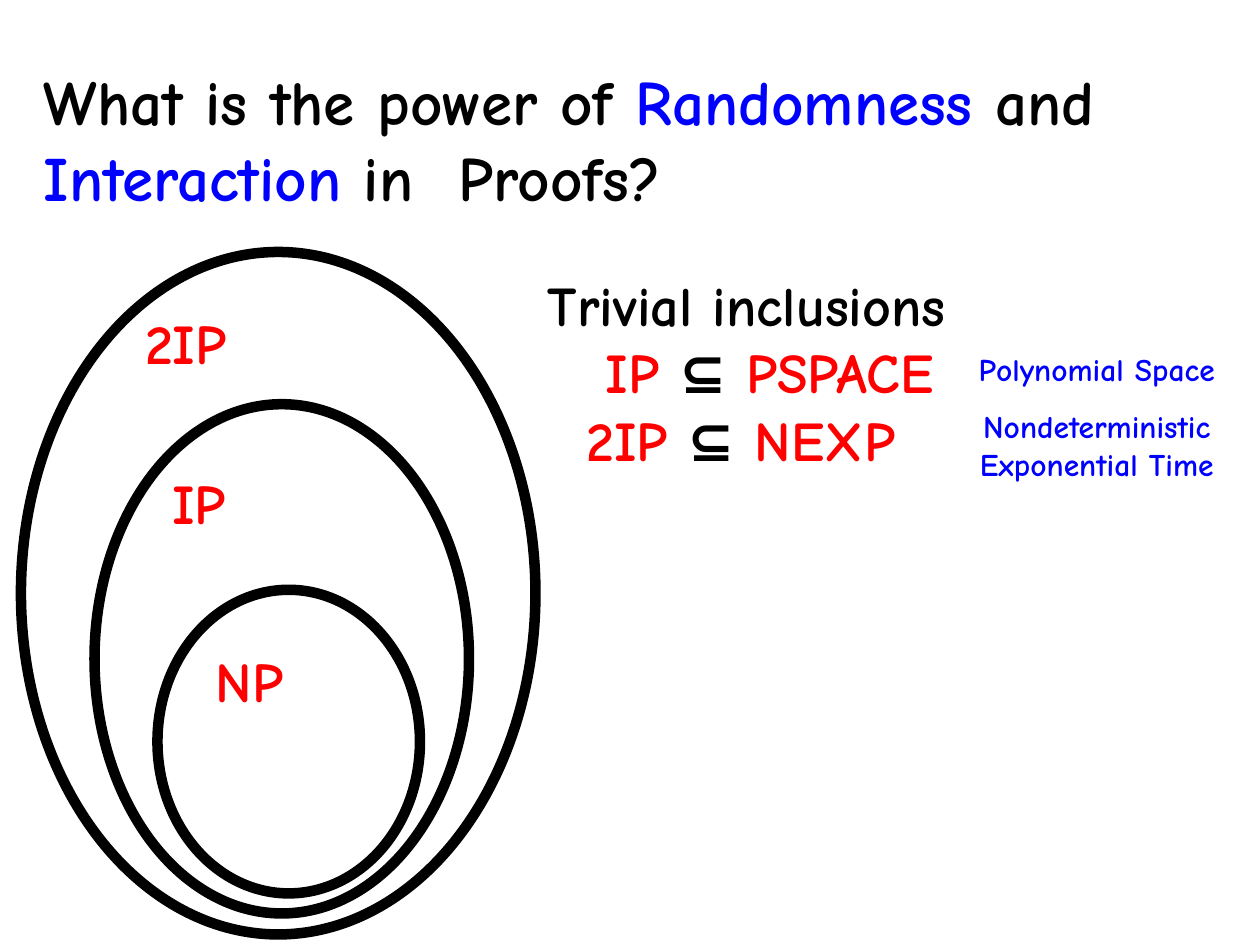
from pptx import Presentation
from pptx.dml.color import RGBColor
from pptx.enum.shapes import MSO_SHAPE
from pptx.enum.text import MSO_AUTO_SIZE, PP_ALIGN
from pptx.util import Pt

ELLIPSE = MSO_SHAPE.OVAL
GROW = MSO_AUTO_SIZE.SHAPE_TO_FIT_TEXT
LEFT, CENTER = PP_ALIGN.LEFT, PP_ALIGN.CENTER

FONT = "Comic Neue"
BLACK, BLUE, RED = "000000", "0000FF", "FF0000"

# Each paragraph is a dict: its spans (text, colour) and optional format.
TITLE = [{"spans": [
    ("What is the power of ", BLACK), ("Randomness ", BLUE), ("and ", BLACK),
    ("Interaction ", BLUE), ("in  Proofs?", BLACK),
]}]
INCLUSIONS = [
    {"spans": [("Trivial inclusions", BLACK)]},
    {"spans": [("IP ", RED), ("⊆", BLACK), (" PSPACE", RED)], "indent": 33},
    {"spans": [("2IP ", RED), ("⊆", BLACK), (" NEXP", RED)], "indent": 22},
]
CLASS_NOTES = [
    {"spans": [("Polynomial Space", BLUE)], "line_spacing": 1.5},
    {"spans": [("Nondeterministic", BLUE)], "line_spacing": 1.5, "align": CENTER},
    {"spans": [("Exponential Time", BLUE)], "align": CENTER},
]
# Name, ellipse bounds, label bounds (left, top, width, height)
CLASSES = [
    ("NP", (90, 337, 150, 173.5), (113.8, 365.8, 57.6, 45.4)),
    ("IP", (54, 231, 214, 291), (89.3, 264.2, 49, 45.4)),
    ("2IP", (12, 144, 294, 390), (72, 172.8, 68.4, 45.4)),
]


def color(value):
    return RGBColor.from_string(value)


def add_text(page, bounds, paragraphs, size=32, wrap=True):
    box = page.shapes.add_textbox(*map(Pt, bounds))
    frame = box.text_frame
    frame.word_wrap = wrap
    frame.auto_size = GROW
    for index, content in enumerate(paragraphs):
        para = frame.paragraphs[0] if index == 0 else frame.add_paragraph()
        para.alignment = content.get("align", LEFT)
        if "line_spacing" in content:
            para.line_spacing = content["line_spacing"]
        if "indent" in content:
            para._p.get_or_add_pPr().set("marL", str(Pt(content["indent"])))
        for text, text_color in content["spans"]:
            span = para.add_run()
            span.text = text
            span.font.name = FONT
            span.font.size = Pt(size)
            span.font.bold = True
            span.font.color.rgb = color(text_color)


def add_ellipse(page, bounds):
    ellipse = page.shapes.add_shape(ELLIPSE, *map(Pt, bounds))
    ellipse.shadow.inherit = False
    ellipse.fill.background()
    ellipse.line.color.rgb = color(BLACK)
    ellipse.line.width = Pt(6)


def main():
    deck = Presentation()
    deck.slide_width, deck.slide_height = Pt(720), Pt(540)
    page = deck.slides.add_slide(deck.slide_layouts[6])

    add_text(page, (18, 32.4, 678, 93.6), TITLE, size=36)
    for _, ellipse_bounds, _ in CLASSES:
        add_ellipse(page, ellipse_bounds)
    for name, _, label_bounds in CLASSES:
        label = [{"spans": [(name, RED)], "align": CENTER}]
        add_text(page, label_bounds, label, wrap=False)
    add_text(page, (306, 151.2, 384, 162.7), INCLUSIONS)
    add_text(page, (552.2, 185.8, 162.7, 94.3), CLASS_NOTES, size=18, wrap=False)

    deck.save("out.pptx")


if __name__ == "__main__":
    main()
